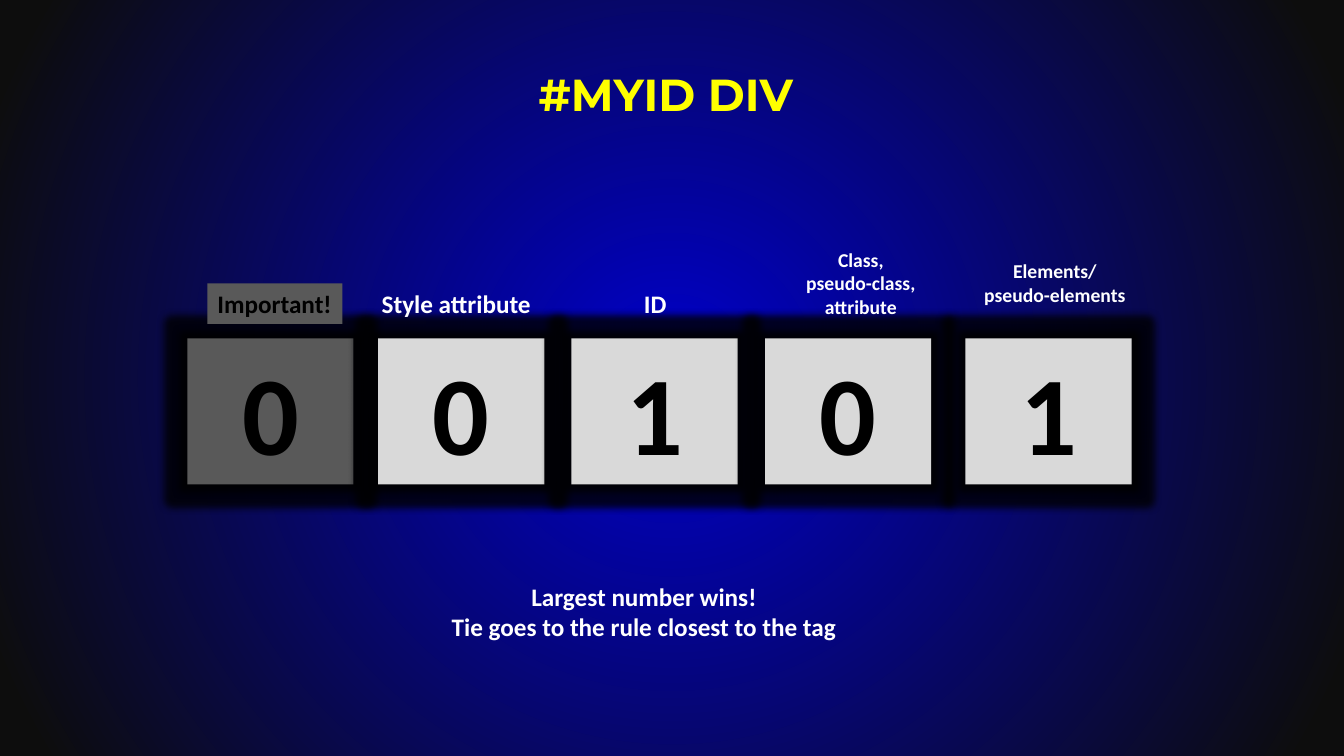
import pptx
import pptx.util
import pptx.dml.color
import pptx.enum.shapes
import pptx.enum.text
import pptx.oxml
import pptx.oxml.ns

Cm = pptx.util.Cm
RGBColor = pptx.dml.color.RGBColor
Align = pptx.enum.text.PP_ALIGN
Anchor = pptx.enum.text.MSO_ANCHOR
Fit = pptx.enum.text.MSO_AUTO_SIZE

BLUE = RGBColor(0x00, 0x00, 0xCC)
NIGHT = RGBColor(0x0D, 0x0D, 0x0D)
BLACK = RGBColor(0x00, 0x00, 0x00)
WHITE = RGBColor(0xFF, 0xFF, 0xFF)
YELLOW = RGBColor(0xFF, 0xFF, 0x00)
DARK = RGBColor(0x59, 0x59, 0x59)
LIGHT = RGBColor(0xD9, 0xD9, 0xD9)

SPACE = pptx.oxml.ns.nsdecls("a")
FOCUS = (
    f'<a:path {SPACE} path="circle">'
    '<a:fillToRect l="50000" t="50000" r="50000" b="50000"/></a:path>'
)
GLOW = (
    f'<a:effectLst {SPACE}><a:glow rad="139700"><a:srgbClr val="000000">'
    '<a:alpha val="80000"/></a:srgbClr></a:glow></a:effectLst>'
)


class Deck:
    base = {"name": "Calibri", "bold": True}

    def __init__(self, width, height):
        self.show = pptx.Presentation()
        self.show.slide_width = Cm(width)
        self.show.slide_height = Cm(height)
        self.slide = self.show.slides.add_slide(self.show.slide_layouts[6])

    def ground(self, inner, outer):
        fill = self.slide.background.fill
        fill.gradient()
        for stop, (color, place) in zip(fill.gradient_stops, [(inner, 0), (outer, 0.95)]):
            stop.color.rgb = color
            stop.position = place
        line = self.slide.element.xpath(".//a:gradFill/a:lin")[0]
        line.getparent().replace(line, pptx.oxml.parse_xml(FOCUS))

    def label(self, shape, text, size, color, align, form):
        frame = shape.text_frame
        frame.text = text
        look = {"word_wrap": True, "auto_size": Fit.SHAPE_TO_FIT_TEXT, "vertical_anchor": Anchor.TOP}
        for key, value in {**look, **form}.items():
            setattr(frame, key, value)
        for para in frame.paragraphs:
            para.alignment = align
            para.font.color.rgb = color
            for key, value in {**self.base, "size": pptx.util.Pt(size)}.items():
                setattr(para.font, key, value)

    def text(self, area, text, size, color=WHITE, align=Align.CENTER, **form):
        box = self.slide.shapes.add_textbox(*map(Cm, area))
        self.label(box, text, size, color, align, form)
        return box

    def block(self, area, text, size, fill, align=Align.CENTER, glow=False, **form):
        kind = pptx.enum.shapes.MSO_SHAPE.RECTANGLE
        box = self.slide.shapes.add_shape(kind, *map(Cm, area))
        box.fill.solid()
        box.fill.fore_color.rgb = fill
        box.line.fill.background()
        if glow:
            box.element.spPr.append(pptx.oxml.parse_xml(GLOW))
        else:
            box.shadow.inherit = False
        self.label(box, text, size, BLACK, align, form)


def main():
    deck = Deck(33.87, 19.05)
    deck.ground(BLUE, NIGHT)

    digits = [
        (4.72, "0", DARK),
        (9.53, "0", LIGHT),
        (14.4, "1", LIGHT),
        (19.28, "0", LIGHT),
        (24.33, "1", LIGHT),
    ]
    for left, digit, fill in digits:
        deck.block((left, 8.53, 4.19, 3.68), digit, 80, fill, glow=True)

    deck.block((5.23, 7.14, 3.4, 1.02), "Important!", 18, DARK, Align.LEFT, word_wrap=False)
    for left, width, name in [(9.37, 4.32, "Style attribute"), (15.98, 1.09, "ID")]:
        deck.text((left, 7.14, width, 1.02), name, 18, align=Align.LEFT, word_wrap=False)
    deck.text((20.02, 6.12, 3.35, 2.06), "Class, pseudo-class, attribute", 14)
    deck.text((24.54, 6.4, 4.09, 1.45), "Elements/\npseudo-elements", 14, word_wrap=False)

    rule = "Largest number wins!\nTie goes to the rule closest to the tag"
    deck.text((11.1, 14.53, 10.26, 1.8), rule, 18, word_wrap=False)

    title = deck.text(
        (1.7, 0.76, 30.48, 3.18), "#MYID DIV ", 32, YELLOW,
        auto_size=Fit.NONE, vertical_anchor=Anchor.MIDDLE,
    )
    title.text_frame.paragraphs[0].font.name = "Montserrat"

    deck.show.save("out.pptx")


if __name__ == "__main__":
    main()
